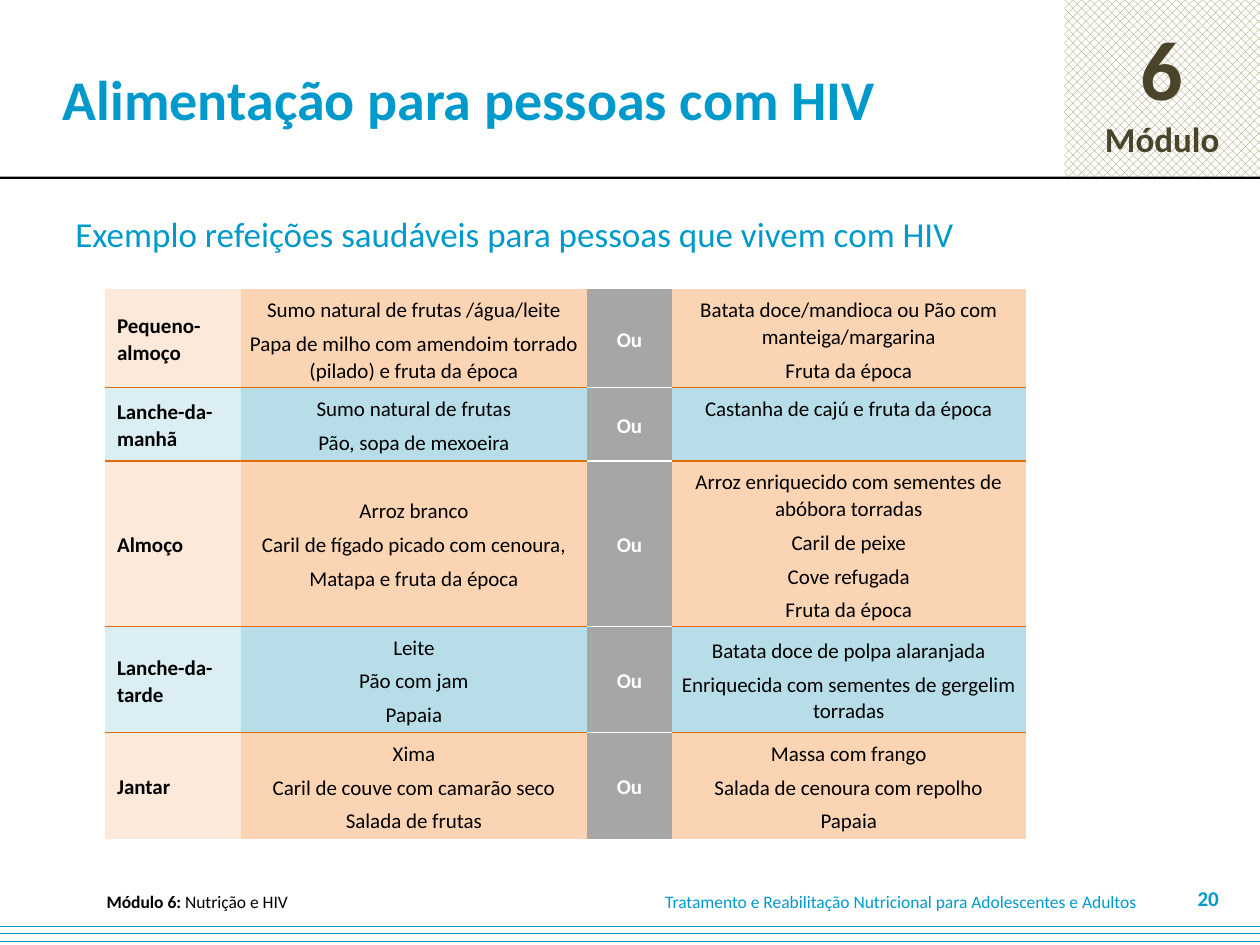
from lxml.etree import SubElement
from pptx import Presentation
from pptx.dml.color import RGBColor
from pptx.enum.dml import MSO_PATTERN
from pptx.enum.shapes import MSO_SHAPE
from pptx.enum.text import MSO_ANCHOR, PP_ALIGN
from pptx.oxml.ns import qn
from pptx.util import Cm, Pt

COLORS = {
    "blue": "0099CC", "black": "000000", "white": "FFFFFF", "olive": "948A54",
    "brown": "4A452A", "orange": "E36C0A", "gray": "A6A6A6",
    "peach_light": "FDE9D9", "peach": "FBD4B4", "sky_light": "DAEEF3", "sky": "B6DDE8",
}
WIDTH, HEIGHT = 25.4, 19.05
COL_WIDTHS = [2.74, 6.99, 1.7, 7.14]
ROW_HEIGHTS = [1.99, 1.48, 3.32, 2.14, 2.14]
MEALS = [
    ("Pequeno-almoço",
     ["Sumo natural de frutas /água/leite",
      "Papa de milho com amendoim torrado (pilado) e fruta da época"],
     ["Batata doce/mandioca ou Pão com manteiga/margarina", "Fruta da época"]),
    ("Lanche-da-manhã",
     ["Sumo natural de frutas", "Pão, sopa de mexoeira"],
     ["Castanha de cajú e fruta da época"]),
    ("Almoço",
     ["Arroz branco", "Caril de fígado picado com cenoura,", "Matapa e fruta da época"],
     ["Arroz enriquecido com sementes de abóbora torradas", "Caril de peixe",
      "Cove refugada", "Fruta da época"]),
    ("Lanche-da-tarde",
     ["Leite", "Pão com jam", "Papaia"],
     ["Batata doce de polpa alaranjada", "Enriquecida com sementes de gergelim torradas"]),
    ("Jantar",
     ["Xima", "Caril de couve com camarão seco", "Salada de frutas"],
     ["Massa com frango", "Salada de cenoura com repolho", "Papaia"]),
]


class SlideBuilder:
    """Holds the style and the current slide, and draws each kind of element."""

    font = "Calibri"

    def __init__(self, s):
        self.s = s

    def rgb(self, name):
        return RGBColor.from_string(COLORS[name])

    def style(self, r, size, color, bold=False):
        r.font.name = self.font
        r.font.size = Pt(size)
        r.font.bold = bold
        r.font.color.rgb = self.rgb(color)

    def rect(self, x, y, w, h, color, pattern=None):
        sp = self.s.shapes.add_shape(MSO_SHAPE.RECTANGLE, Cm(x), Cm(y), Cm(w), Cm(h))
        sp.shadow.inherit = False
        sp.line.fill.background()
        if pattern is None:
            sp.fill.solid()
            sp.fill.fore_color.rgb = self.rgb(color)
        else:
            sp.fill.patterned()
            sp.fill.pattern = pattern
            sp.fill.fore_color.rgb = self.rgb(color)
            sp.fill.back_color.rgb = self.rgb("white")
        return sp

    def badge(self, x, y, w, h, number, label):
        sp = self.rect(x, y, w, h, "olive", MSO_PATTERN.PERCENT_50)
        tf = sp.text_frame
        tf.text = f"{number}\n{label}"
        tf.vertical_anchor = MSO_ANCHOR.MIDDLE
        for p, size in zip(tf.paragraphs, (48, 20)):
            p.alignment = PP_ALIGN.CENTER
            self.style(p.runs[0], size, "brown", True)

    def text(self, x, y, w, h, text, size, color="blue", bold=False,
             align=PP_ALIGN.LEFT, left=0.25):
        sp = self.s.shapes.add_textbox(Cm(x), Cm(y), Cm(w), Cm(h))
        tf = sp.text_frame
        tf.word_wrap = True
        tf.vertical_anchor = MSO_ANCHOR.MIDDLE
        tf.margin_left = Cm(left)
        tf.text = text
        p = tf.paragraphs[0]
        p.alignment = align
        self.style(p.runs[0], size, color, bold)
        return p

    def border(self, cell, side, color=None):
        ln = SubElement(cell._tc.get_or_add_tcPr(), qn(f"a:ln{side}"), w=str(Pt(1)))
        if color is None:
            SubElement(ln, qn("a:noFill"))
        else:
            fill = SubElement(ln, qn("a:solidFill"))
            SubElement(fill, qn("a:srgbClr"), val=COLORS[color])

    def cell(self, cell, lines, fill, rule, top, bottom, color="black", bold=False,
             align=PP_ALIGN.CENTER, left=0.1, anchor=MSO_ANCHOR.MIDDLE):
        cell.margin_left, cell.margin_right = Cm(left), Cm(0.1)
        cell.margin_top, cell.margin_bottom = Cm(0.15), Cm(0.1)
        cell.vertical_anchor = anchor
        for side, shown in (("L", False), ("R", False), ("T", top), ("B", bottom)):
            self.border(cell, side, rule if shown else None)
        cell.fill.solid()
        cell.fill.fore_color.rgb = self.rgb(fill)
        cell.text_frame.text = "\n".join(lines)
        for p in cell.text_frame.paragraphs:
            p.alignment = align
            p.line_spacing = 1.05
            p.space_after = Pt(4)
            self.style(p.runs[0], 12, color, bold)

    def meal_table(self, x, y, meals):
        shape = self.s.shapes.add_table(len(meals), len(COL_WIDTHS), Cm(x), Cm(y),
                                        Cm(sum(COL_WIDTHS)), Cm(sum(ROW_HEIGHTS)))
        tbl = shape.table
        tbl.first_row = tbl.horz_banding = False
        for col, w in zip(tbl.columns, COL_WIDTHS):
            col.width = Cm(w)
        for row, h in zip(tbl.rows, ROW_HEIGHTS):
            row.height = Cm(h)
        for i, (meal, first, second) in enumerate(meals):
            tint = "sky" if i % 2 else "peach"
            edges = {"top": i > 0, "bottom": i < len(meals) - 1}
            anchor = MSO_ANCHOR.TOP if len(second) == 1 else MSO_ANCHOR.MIDDLE
            self.cell(tbl.cell(i, 0), [meal], f"{tint}_light", "orange", **edges,
                      bold=True, align=PP_ALIGN.LEFT, left=0.25)
            self.cell(tbl.cell(i, 1), first, tint, "orange", **edges)
            self.cell(tbl.cell(i, 2), ["Ou"], "gray", "white", **edges,
                      color="white", bold=True)
            self.cell(tbl.cell(i, 3), second, tint, "orange", **edges, anchor=anchor)


def main():
    prs = Presentation()
    prs.slide_width, prs.slide_height = Cm(WIDTH), Cm(HEIGHT)
    b = SlideBuilder(prs.slides.add_slide(prs.slide_layouts[6]))

    b.badge(21.46, 0, 3.94, 3.56, "6", "Módulo")
    b.rect(0, 3.56, WIDTH, 0.05, "black")
    b.rect(0, 18.52, WIDTH, 0.53, "blue", MSO_PATTERN.DASHED_HORIZONTAL)

    b.text(0, 0, 21.8, 3.94, "Alimentação para pessoas com HIV", 32, bold=True, left=1.27)
    b.text(1.27, 3.43, 19.33, 2.57,
           "Exemplo refeições saudáveis para pessoas que vivem com HIV", 20)
    b.meal_table(2.11, 5.82, MEALS)

    p = b.text(1.9, 17.91, 11.18, 0.51, "Módulo 6: ", 10, "black", True)
    r = p.add_run()
    r.text = "Nutrição e HIV"
    b.style(r, 10, "black")
    b.text(13.16, 17.91, 10.29, 0.51,
           "Tratamento e Reabilitação Nutricional para Adolescentes e Adultos", 10)
    b.text(23.55, 17.78, 1.27, 0.64, "20", 12, bold=True, align=PP_ALIGN.RIGHT)

    prs.save("out.pptx")


if __name__ == "__main__":
    main()
